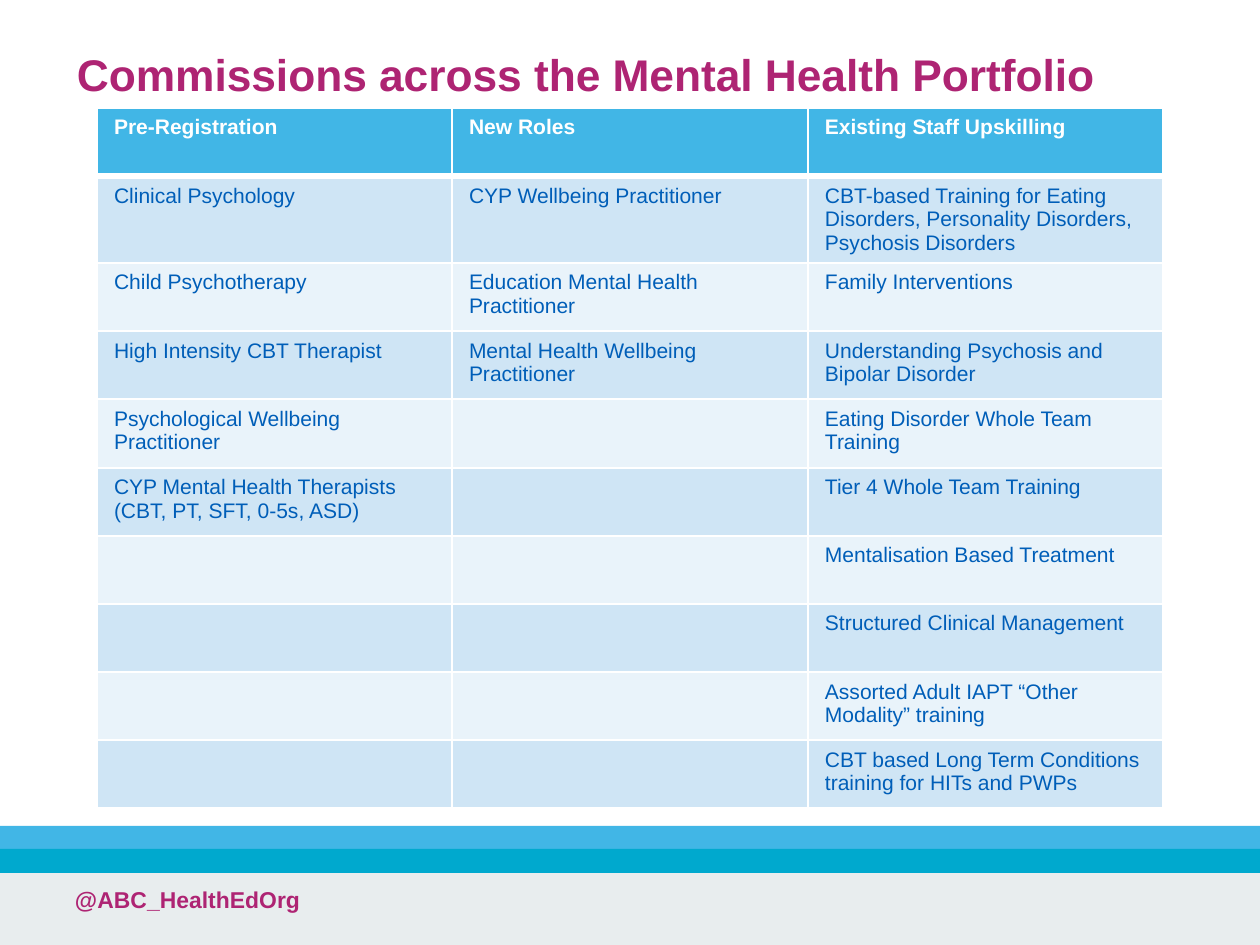
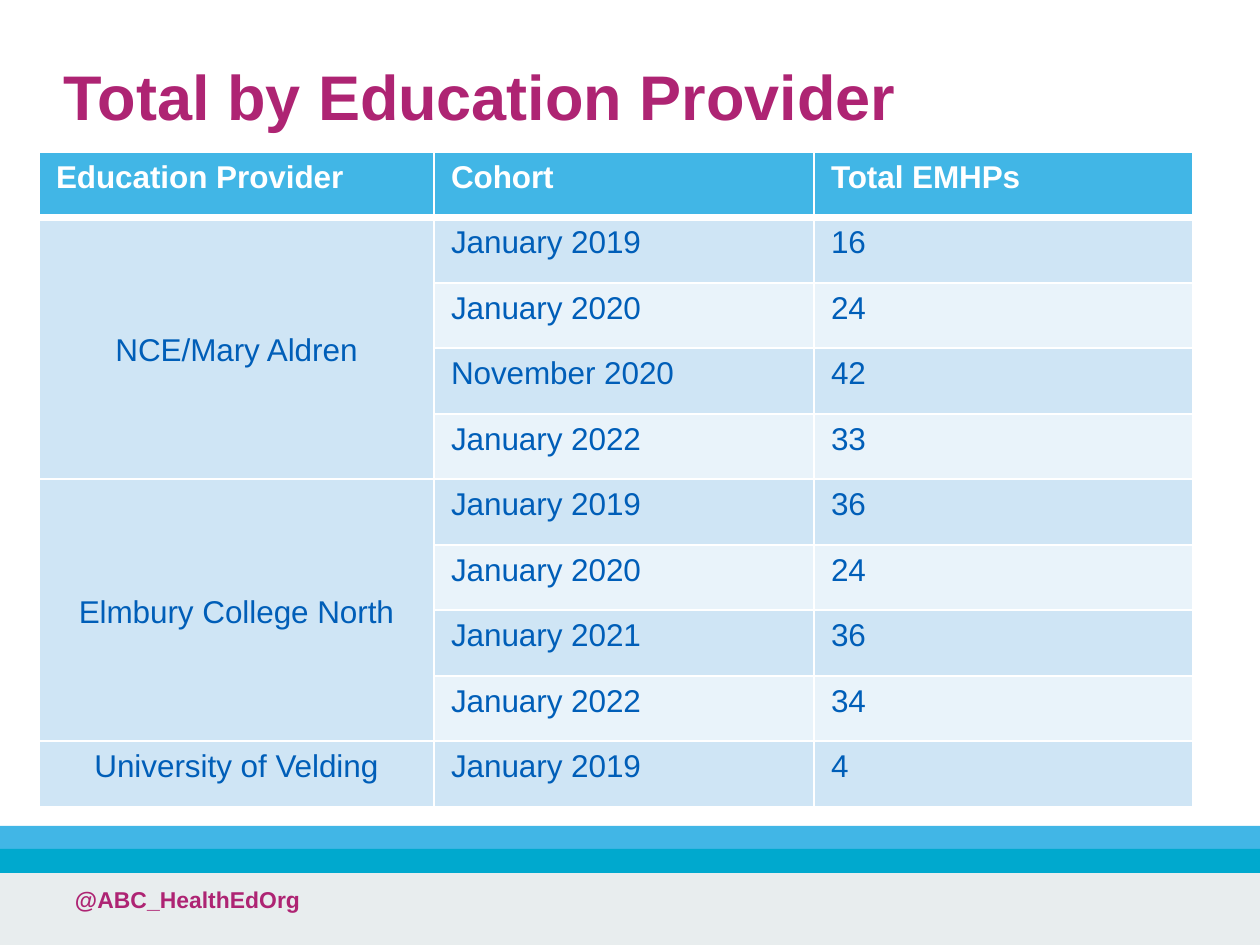
from dataclasses import dataclass

import lxml.etree
import pptx
import pptx.dml.color
import pptx.enum.shapes
import pptx.enum.text
import pptx.oxml.ns
import pptx.util

EMU_PER_PX = 914400 / 168
SLIDE_WIDTH, SLIDE_HEIGHT = 1260, 945
FONT = "Arial"
COLORS = {
    "title": "AE2473",
    "header": "41B6E6",
    "teal": "00A9CE",
    "footer": "E8EDEE",
    "text": "005EB8",
    "odd_row": "CFE5F5",
    "even_row": "E9F3FA",
    "white": "FFFFFF",
}
HEADING_INSETS = {"left": 17, "right": 17, "top": 8, "bottom": 8}
CELL_INSETS = {"left": 17, "right": 17, "top": 8, "bottom": 3}
ANCHOR = pptx.enum.text.MSO_ANCHOR
ALIGN = pptx.enum.text.PP_ALIGN
HANDLE = "@ABC_HealthEdOrg"


@dataclass(frozen=True)
class Box:
    left: int
    top: int
    width: int
    height: int

    def emu(self) -> list[int]:
        return [px(n) for n in (self.left, self.top, self.width, self.height)]


@dataclass(frozen=True)
class Band:
    box: Box
    color: str


@dataclass(frozen=True)
class Group:
    """Body rows whose first cells are merged into one centred label."""
    label: str
    first: int
    last: int


@dataclass(frozen=True)
class TableSlide:
    title: str
    title_box: Box
    title_size: float
    left: int
    top: int
    height: int
    columns: tuple[int, ...]
    text_size: float
    rows: tuple[tuple[str, ...], ...]
    groups: tuple[Group, ...] = ()


BANDS = (
    Band(Box(0, 873, SLIDE_WIDTH, 72), "footer"),
    Band(Box(0, 826, SLIDE_WIDTH, 24), "header"),
    Band(Box(0, 849, SLIDE_WIDTH, 24), "teal"),
)

SLIDES = (
    TableSlide(
        "Commissions across the Mental Health Portfolio",
        Box(60, 0, 1087, 154), 19, 97, 108, 682, (355, 356, 355), 9,
        (
            ("Pre-Registration", "New Roles", "Existing Staff Upskilling"),
            ("Clinical Psychology", "CYP Wellbeing Practitioner",
             "CBT-based Training for Eating Disorders, Personality Disorders, "
             "Psychosis Disorders"),
            ("Child Psychotherapy", "Education Mental Health Practitioner",
             "Family Interventions"),
            ("High Intensity CBT Therapist", "Mental Health Wellbeing Practitioner",
             "Understanding Psychosis and Bipolar Disorder"),
            ("Psychological Wellbeing Practitioner", "",
             "Eating Disorder Whole Team Training"),
            ("CYP Mental Health Therapists (CBT, PT, SFT, 0-5s, ASD)", "",
             "Tier 4 Whole Team Training"),
            ("", "", "Mentalisation Based Treatment"),
            ("", "", "Structured Clinical Management"),
            ("", "", "Assorted Adult IAPT “Other Modality” training"),
            ("", "", "CBT based Long Term Conditions training for HITs and PWPs"),
        ),
    ),
    TableSlide(
        "Total by Education Provider",
        Box(47, 9, 1087, 183), 27, 39, 152, 655, (395, 380, 379), 13.5,
        (
            ("Education Provider", "Cohort", "Total EMHPs"),
            ("", "January 2019", "16"),
            ("", "January 2020", "24"),
            ("", "November 2020", "42"),
            ("", "January 2022", "33"),
            ("", "January 2019", "36"),
            ("", "January 2020", "24"),
            ("", "January 2021", "36"),
            ("", "January 2022", "34"),
            ("", "January 2019", "4"),
        ),
        (
            Group("NCE/Mary Aldren", 1, 4),
            Group("Elmbury College North", 5, 8),
            Group("University of Velding", 9, 9),
        ),
    ),
)


def px(length: int) -> int:
    return round(length * EMU_PER_PX)


def rgb(name: str) -> pptx.dml.color.RGBColor:
    return pptx.dml.color.RGBColor.from_string(COLORS[name])


def apply_format(target, values: dict) -> None:
    for name, value in values.items():
        setattr(target, name, value)


def set_insets(target, insets: dict[str, int]) -> None:
    apply_format(target, {f"margin_{side}": px(n) for side, n in insets.items()})


def write(paragraph, text: str, size: float, color: str, bold: bool) -> None:
    if not text:
        return
    run = paragraph.add_run()
    run.text = text
    apply_format(run.font, {"name": FONT, "size": pptx.util.Pt(size), "bold": bold})
    run.font.color.rgb = rgb(color)


def add_heading(slide, box: Box, text: str, size: float, anchor, spacing: float) -> None:
    frame = slide.shapes.add_textbox(*box.emu()).text_frame
    apply_format(frame, {"word_wrap": True, "vertical_anchor": anchor})
    set_insets(frame, HEADING_INSETS)
    paragraph = frame.paragraphs[0]
    paragraph.line_spacing = spacing
    write(paragraph, text, size, "title", True)


def add_bands(slide) -> None:
    for band in BANDS:
        shape = slide.shapes.add_shape(
            pptx.enum.shapes.MSO_SHAPE.RECTANGLE, *band.box.emu())
        shape.shadow.inherit = False
        shape.fill.solid()
        shape.fill.fore_color.rgb = rgb(band.color)
        shape.line.fill.background()


def set_borders(cell, widths: dict[str, int]) -> None:
    """Draw white cell borders; widths are in points, keyed by side."""
    qn = pptx.oxml.ns.qn
    properties = cell._tc.get_or_add_tcPr()
    for side, width in widths.items():
        line = lxml.etree.SubElement(
            properties, qn(f"a:ln{side}"), w=str(pptx.util.Pt(width)))
        fill = lxml.etree.SubElement(line, qn("a:solidFill"))
        lxml.etree.SubElement(fill, qn("a:srgbClr"), val=COLORS["white"])


def style_cell(cell, row: int, fill: str) -> None:
    set_borders(cell, {"L": 1, "R": 1, "T": 3 if row == 1 else 1, "B": 3 if row == 0 else 1})
    set_insets(cell, CELL_INSETS)
    cell.fill.solid()
    cell.fill.fore_color.rgb = rgb(fill)


def add_table(slide, content: TableSlide) -> None:
    row_count = len(content.rows)
    box = Box(content.left, content.top, sum(content.columns), content.height)
    table = slide.shapes.add_table(row_count, len(content.columns), *box.emu()).table
    apply_format(table, {"first_row": False, "horz_banding": False})
    for column, width in zip(table.columns, content.columns):
        column.width = px(width)
    for row_index, texts in enumerate(content.rows):
        table.rows[row_index].height = px(content.height) // row_count
        is_header = row_index == 0
        fill = "header" if is_header else "odd_row" if row_index % 2 else "even_row"
        for column_index, text in enumerate(texts):
            cell = table.cell(row_index, column_index)
            style_cell(cell, row_index, fill)
            write(cell.text_frame.paragraphs[0], text, content.text_size,
                  "white" if is_header else "text", is_header)
    for group in content.groups:
        cell = table.cell(group.first, 0)
        if group.last > group.first:
            cell.merge(table.cell(group.last, 0))
            cell.vertical_anchor = ANCHOR.MIDDLE
        paragraph = cell.text_frame.paragraphs[0]
        paragraph.alignment = ALIGN.CENTER
        write(paragraph, group.label, content.text_size, "text", False)


def main() -> None:
    presentation = pptx.Presentation()
    apply_format(presentation, {"slide_width": px(SLIDE_WIDTH),
                                "slide_height": px(SLIDE_HEIGHT)})
    for content in SLIDES:
        slide = presentation.slides.add_slide(presentation.slide_layouts[6])
        add_bands(slide)
        add_heading(slide, Box(58, 878, 736, 66), HANDLE, 9.8, ANCHOR.TOP, 1.0)
        add_heading(slide, content.title_box, content.title, content.title_size,
                    ANCHOR.MIDDLE, 0.9)
        add_table(slide, content)
    presentation.save("out.pptx")


if __name__ == "__main__":
    main()
